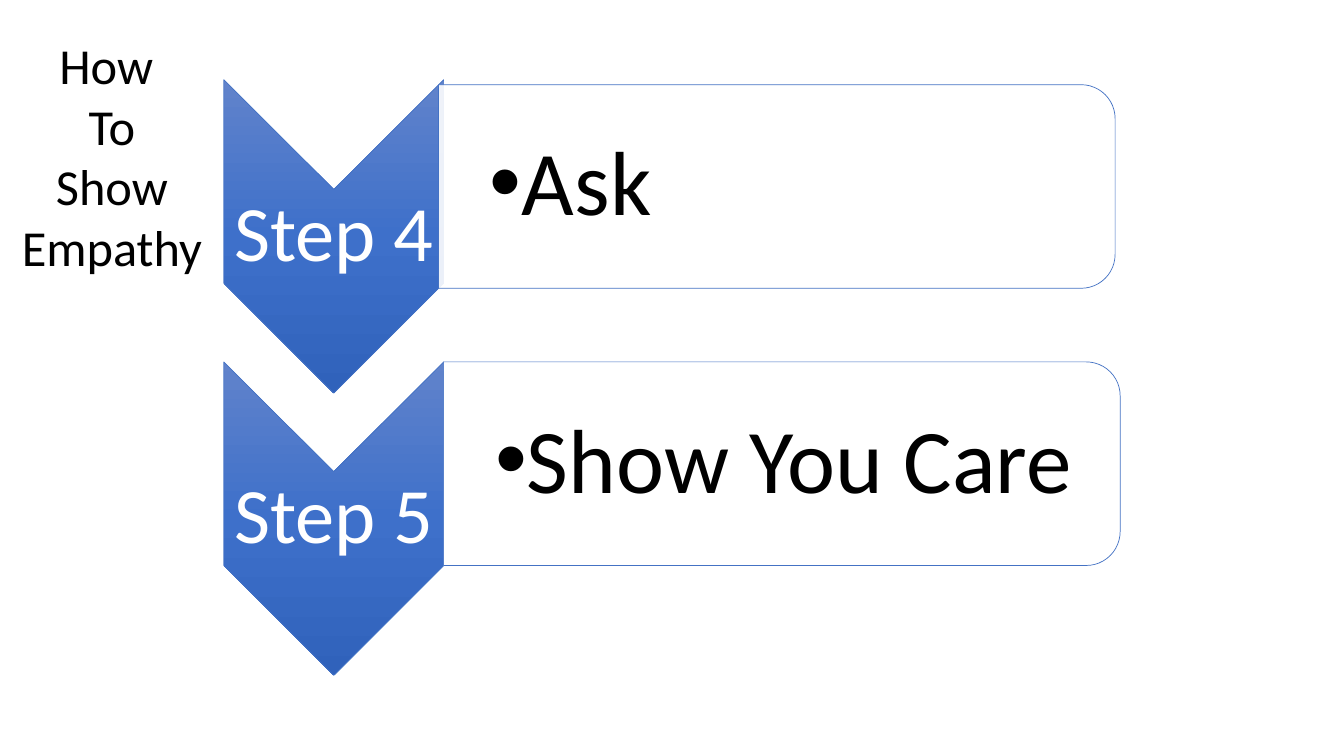
from dataclasses import dataclass

from lxml import etree
from pptx import Presentation
from pptx.dml.color import RGBColor
from pptx.enum.shapes import MSO_SHAPE
from pptx.enum.text import MSO_ANCHOR, MSO_AUTO_SIZE, PP_ALIGN
from pptx.oxml import parse_xml
from pptx.oxml.ns import nsdecls, qn
from pptx.util import Inches, Pt


@dataclass(frozen=True)
class Theme:
    font: str = "Calibri"
    black: str = "000000"
    white: str = "FFFFFF"
    outline: str = "4472C4"
    gradient: tuple = ((0, "6183CB"), (50, "3E70CA"), (100, "3062BB"))
    title_size: int = 36
    step_size: int = 56
    action_size: int = 65


THEME = Theme()
STEPS = [("Step 4", "Ask"), ("Step 5", "Show You Care")]


@dataclass(frozen=True)
class Box:
    left: float
    top: float
    width: float
    height: float

    def lengths(self):
        return [Inches(n) for n in (self.left, self.top, self.width, self.height)]

    def centred(self, width, height):
        """A box of the given size with the same centre."""
        return Box(self.left + (self.width - width) / 2,
                   self.top + (self.height - height) / 2, width, height)


def place(shape, box):
    shape.left, shape.top, shape.width, shape.height = box.lengths()


def format_text(shape, size, color, anchor, alignment, insets, line_spacing=1.0):
    frame = shape.text_frame
    frame.word_wrap = True
    frame.auto_size = MSO_AUTO_SIZE.NONE
    frame.vertical_anchor = anchor
    (frame.margin_left, frame.margin_top,
     frame.margin_right, frame.margin_bottom) = [Inches(n) for n in insets]
    for paragraph in frame.paragraphs:
        paragraph.alignment = alignment
        paragraph.line_spacing = line_spacing
        paragraph.space_before = Pt(0)
        for run in paragraph.runs:
            run.font.name = THEME.font
            run.font.size = Pt(size)
            run.font.color.rgb = RGBColor.from_string(color)


def add_turned_shape(slide, kind, box):
    """Add a preset shape turned a quarter so that it fills the box."""
    turned = box.centred(box.height, box.width)
    shape = slide.shapes.add_shape(kind, *turned.lengths())
    shape.rotation = 90
    shape.shadow.inherit = False
    shape.line.color.rgb = RGBColor.from_string(THEME.outline)
    shape.line.width = Pt(0.5)
    return shape


def fill_gradient(shape):
    stops = "".join(
        f'<a:gs pos="{position * 1000}"><a:srgbClr val="{color}"/></a:gs>'
        for position, color in THEME.gradient)
    gradient = parse_xml(
        f'<a:gradFill {nsdecls("a")} rotWithShape="0"><a:gsLst>{stops}</a:gsLst>'
        '<a:lin ang="5400000" scaled="0"/></a:gradFill>')
    shape.element.spPr.find(qn("a:prstGeom")).addnext(gradient)


def build_title(slide, box):
    title = slide.shapes.title
    place(title, box)
    title.text_frame.text = "How \nTo\nShow\nEmpathy"
    format_text(title, THEME.title_size, THEME.black, MSO_ANCHOR.TOP,
                PP_ALIGN.CENTER, (0.1, 0.05, 0.1, 0.05))


def build_chevron(slide, box, label):
    fill_gradient(add_turned_shape(slide, MSO_SHAPE.CHEVRON, box))
    caption = slide.shapes.add_textbox(*box.centred(box.width, 0.93).lengths())
    caption.text_frame.text = label
    format_text(caption, THEME.step_size, THEME.white, MSO_ANCHOR.MIDDLE,
                PP_ALIGN.CENTER, (0.04,) * 4, 0.9)


def build_panel(slide, box, placeholder, action):
    # Slightly transparent white panel
    panel = add_turned_shape(slide, MSO_SHAPE.ROUND_2_SAME_RECTANGLE, box)
    panel.fill.solid()
    panel.fill.fore_color.rgb = RGBColor.from_string(THEME.white)
    color = panel.element.spPr.find(qn("a:solidFill"))[0]
    etree.SubElement(color, qn("a:alpha")).set("val", "90000")

    # Bulleted action, brought in front of the panel
    place(placeholder, Box(box.left, box.top + 0.1, 6.61, box.height - 0.2))
    placeholder.text_frame.text = action
    format_text(placeholder, THEME.action_size, THEME.black, MSO_ANCHOR.MIDDLE,
                PP_ALIGN.LEFT, (0.51, 0.05, 0.05, 0.05), 0.9)
    properties = placeholder.text_frame.paragraphs[0]._p.get_or_add_pPr()
    properties.set("marL", str(Inches(0.31)))
    properties.set("indent", str(-Inches(0.31)))
    etree.SubElement(properties, qn("a:buChar")).set("char", "•")
    panel.element.addnext(placeholder.element)


def main():
    presentation = Presentation()
    presentation.slide_width = Inches(13.33)
    presentation.slide_height = Inches(7.5)
    slide = presentation.slides.add_slide(
        presentation.slide_layouts.get_by_name("Two Content"))
    title, *bodies = slide.placeholders

    build_title(slide, Box(0, 0.29, 2.22, 2.52))
    panel_corners = [(4.35, 0.84), (4.4, 3.59)]
    for index, (label, action) in enumerate(STEPS):
        build_chevron(slide, Box(2.22, 0.79 + 2.8 * index, 2.18, 3.11), label)
        build_panel(slide, Box(*panel_corners[index], 6.71, 2.02),
                    bodies[index], action)
    presentation.save("out.pptx")


if __name__ == "__main__":
    main()
